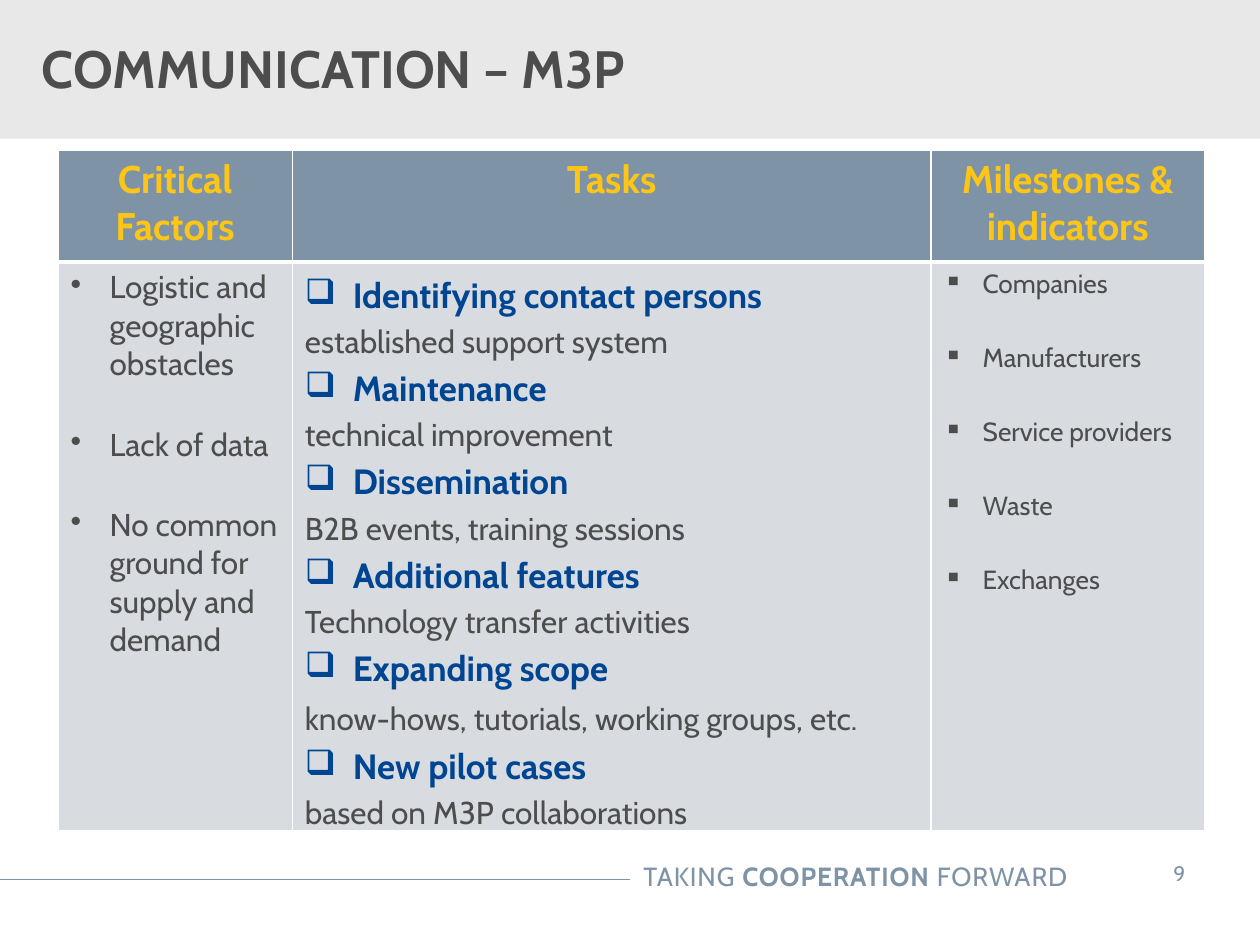
from lxml import etree
from pptx import Presentation
from pptx.dml.color import RGBColor
from pptx.enum import shapes, text
from pptx.oxml import parse_xml
from pptx.oxml.ns import nsdecls, qn
from pptx.util import Inches, Pt

FONT = "Cabin"
DARK = RGBColor(0x4D, 0x4D, 0x4E)
SLATE = RGBColor(0x7E, 0x93, 0xA5)
PALE = RGBColor(0xD8, 0xDC, 0xE1)
BANNER = RGBColor(0xE8, 0xE8, 0xE8)
YELLOW = RGBColor(0xFD, 0xC6, 0x17)
BLUE = RGBColor(0x00, 0x45, 0x91)

HEADERS = ["Critical Factors", "Tasks", "Milestones & indicators"]
FACTORS = ["Logistic and geographic obstacles", "Lack of data",
           "No common ground for supply and demand"]
TASKS = [
    ("Identifying contact persons", "established support system"),
    ("Maintenance", "technical improvement"),
    ("Dissemination", "B2B events, training sessions"),
    ("Additional features", "Technology transfer activities"),
    ("Expanding scope", "know-hows, tutorials, working groups, etc."),
    ("New pilot cases", "based on M3P collaborations"),
]
MILESTONES = ["Companies", "Manufacturers", "Service providers", "Waste", "Exchanges"]


def add_run(paragraph, words, size, color, bold=False):
    run = paragraph.add_run()
    run.text = words
    run.font.name, run.font.size, run.font.bold = FONT, Pt(size), bold
    run.font.color.rgb = color
    return run


def add_bullet(paragraph, character, indent):
    properties = paragraph._p.get_or_add_pPr()
    properties.set("marL", str(Inches(indent)))
    properties.set("indent", str(-Inches(indent)))
    bullet = etree.SubElement(properties, qn("a:buChar"))
    bullet.set("char", character)


presentation = Presentation()
presentation.slide_width, presentation.slide_height = Inches(10), Inches(7.5)
slide = presentation.slides.add_slide(presentation.slide_layouts[5])

# Title banner, behind the title
banner = slide.shapes.add_shape(shapes.MSO_SHAPE.RECTANGLE, 0, 0, Inches(10), Inches(1.1))
banner.shadow.inherit = False
banner.fill.solid()
banner.fill.fore_color.rgb = BANNER
banner.line.fill.background()
slide.shapes.element.insert(2, banner.element)

# Title
title = slide.shapes.title
title.left, title.top = Inches(-0.01), Inches(0.16)
title.width, title.height = Inches(7.24), Inches(0.75)
title.text_frame.auto_size = text.MSO_AUTO_SIZE.NONE
title.text_frame.vertical_anchor = text.MSO_ANCHOR.MIDDLE
paragraph = title.text_frame.paragraphs[0]
paragraph.alignment = text.PP_ALIGN.LEFT
paragraph._p.get_or_add_pPr().set("marL", str(Inches(0.24)))
add_run(paragraph, "COMMUNICATION – M3P", 30, DARK, True)

# Footer line
line = slide.shapes.add_connector(shapes.MSO_CONNECTOR.STRAIGHT,
                                  Inches(-0.01), Inches(6.98), Inches(5), Inches(6.98))
line.line.color.rgb = SLATE
line.line.width = Pt(0.75)
etree.SubElement(line.element.spPr, qn("a:effectLst"))

# Footer motto
motto = slide.shapes.add_textbox(Inches(3.88), Inches(6.78), Inches(4.69), Inches(0.35))
motto.text_frame.word_wrap = True
paragraph = motto.text_frame.paragraphs[0]
paragraph.alignment = text.PP_ALIGN.RIGHT
for words, bold in [("TAKING ", False), ("COOPERATION", True), (" FORWARD", False)]:
    run = add_run(paragraph, words, 15, SLATE, bold)
    run._r.get_or_add_rPr().set("spc", "50")

# Page number
number = slide.shapes.add_textbox(Inches(8.99), Inches(6.73), Inches(0.74), Inches(0.4))
frame = number.text_frame
frame.margin_left = frame.margin_right = Inches(0.2)
frame.margin_top = frame.margin_bottom = Inches(0.1)
frame.word_wrap = False
frame.paragraphs[0].alignment = text.PP_ALIGN.CENTER
add_run(frame.paragraphs[0], "9", 12, SLATE)

# Table grid
table = slide.shapes.add_table(2, 3, Inches(0.46), Inches(1.19),
                               Inches(9.1), Inches(5.4)).table
table.horz_banding = False
for column, width in zip(table.columns, [1.86, 5.07, 2.17]):
    column.width = Inches(width)
for row, height in zip(table.rows, [0.89, 4.51]):
    row.height = Inches(height)

# Cell fills and white borders, thicker below the header
for row_index, fill in enumerate([SLATE, PALE]):
    for cell in table.rows[row_index].cells:
        cell.fill.solid()
        cell.fill.fore_color.rgb = fill
        properties = cell._tc.get_or_add_tcPr()
        widths = {"L": 1, "R": 1, "T": 3 if row_index else 1, "B": 1 if row_index else 3}
        for position, (side, width) in enumerate(widths.items()):
            properties.insert(position, parse_xml(
                f'<a:ln{side} {nsdecls("a")} w="{Pt(width)}"><a:solidFill>'
                f'<a:srgbClr val="FFFFFF"/></a:solidFill></a:ln{side}>'))

# Header row
for cell, words in zip(table.rows[0].cells, HEADERS):
    paragraph = cell.text_frame.paragraphs[0]
    paragraph.alignment = text.PP_ALIGN.CENTER
    add_run(paragraph, words, 22, YELLOW, True)

# Bulleted outer columns
for column, items, character, size in [(0, FACTORS, "•", 18), (2, MILESTONES, "▪", 15)]:
    frame = table.cell(1, column).text_frame
    for index, words in enumerate(items):
        paragraph = frame.add_paragraph() if index else frame.paragraphs[0]
        add_bullet(paragraph, character, 0.31)
        paragraph.space_before = Pt(12 if index else 0)
        paragraph.space_after = Pt(12)
        add_run(paragraph, words, size, DARK)

# Tasks column: heading and explanation in turn
frame = table.cell(1, 1).text_frame
for index, (heading, detail) in enumerate(TASKS):
    paragraph = frame.add_paragraph() if index else frame.paragraphs[0]
    add_bullet(paragraph, "❑", 0.38)
    add_run(paragraph, heading, 20, BLUE, True)
    paragraph = frame.add_paragraph()
    add_run(paragraph, detail, 18, DARK)
    if heading == "Expanding scope":
        add_run(paragraph, " ", 20, DARK)
for paragraph in frame.paragraphs:
    paragraph.alignment = text.PP_ALIGN.JUSTIFY
    paragraph.line_spacing = 1.15

presentation.save("out.pptx")
